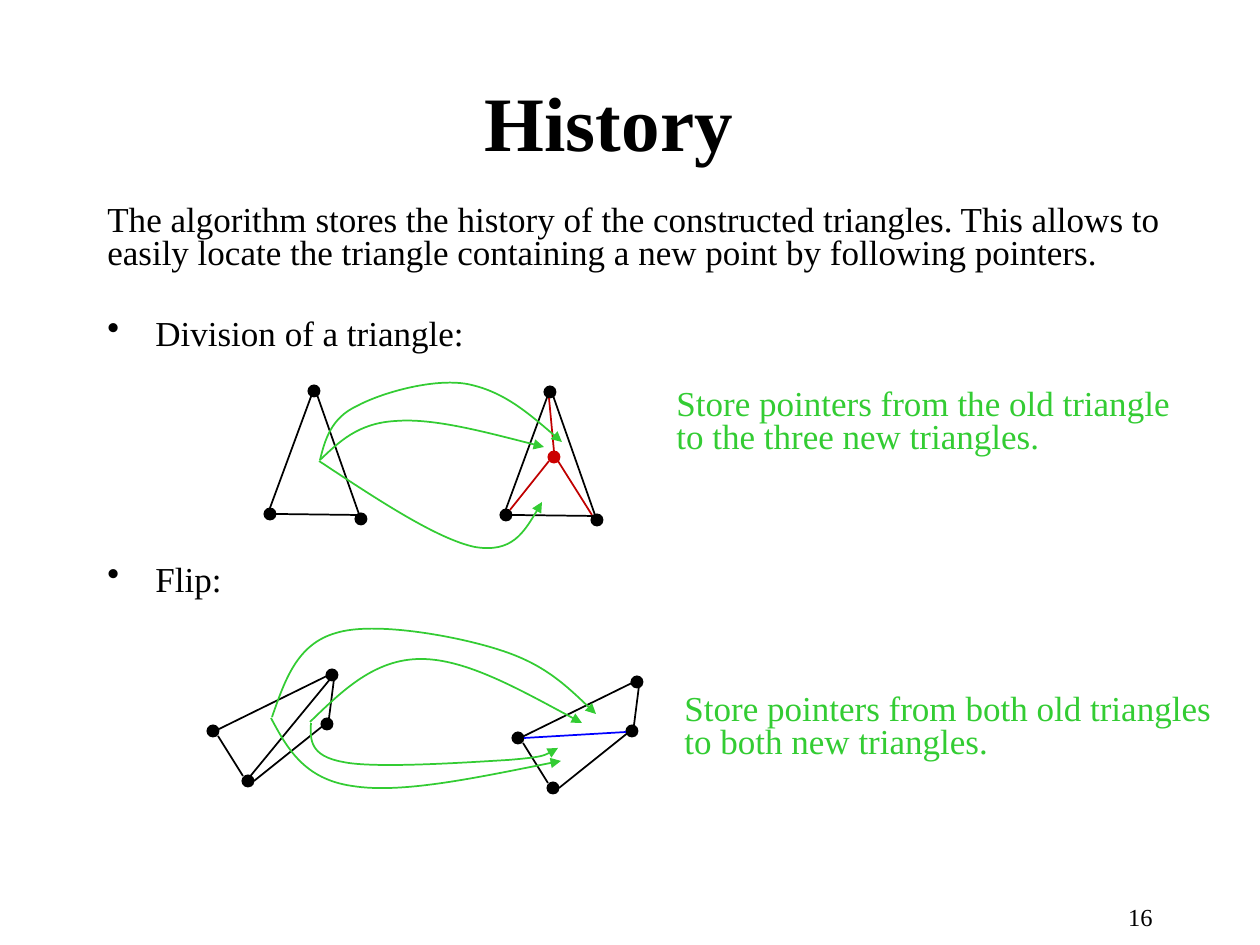
from lxml.etree import SubElement
from pptx import Presentation
from pptx.dml.color import RGBColor
from pptx.enum.shapes import MSO_CONNECTOR as CONNECTOR, MSO_SHAPE as SHAPE
from pptx.enum.text import MSO_ANCHOR as ANCHOR, PP_ALIGN as ALIGN
from pptx.oxml.ns import qn
from pptx.util import Pt

PX = 914400 / 126
FONT = "Times New Roman"
COLOURS = {
    "ink": "000000",
    "new_point": "CC0000",
    "new_edge": "C00000",
    "flipped": "0000FF",
    "pointer": "33CC33",
}
DOT = 13
INDENT = 48

TRIANGLE_DOTS = [(314, 391), (361, 519), (270, 514)]
TRIANGLE_EDGES = [
    ((357, 515), (276, 514)),
    ((270, 508), (312, 394)),
    ((359, 514), (314, 386)),
]
TRIANGLE_OFFSETS = [(0, 0), (236, 1)]
DIVISION_EDGES = [
    ((554, 451), (549, 398)),
    ((510, 510), (549, 461)),
    ((592, 515), (558, 461)),
]
QUAD_DOTS = [(248, 781), (213, 731), (327, 724), (332, 675)]
QUAD_EDGES = [
    ((243, 776), (218, 736)),
    ((215, 731), (331, 674)),
    ((254, 781), (329, 721)),
    ((328, 726), (334, 679)),
]
QUAD_OFFSETS = [(0, 0), (305, 7)]
DIVISION_POINTERS = [
    [(320, 460), (339, 442), (358, 423), (396, 421),
     (433, 418), (489, 433), (544, 447)],
    [(319, 461), (378, 500), (437, 539), (475, 547),
     (512, 553), (527, 528), (542, 502)],
    [(320, 460), (325, 440), (331, 418), (357, 406), (381, 393),
     (433, 378), (467, 384), (503, 391), (532, 416), (562, 442)],
]
FLIP_POINTERS = [
    [(272, 717), (285, 680), (297, 644), (336, 633), (374, 621),
     (457, 636), (500, 650), (544, 664), (570, 689), (596, 714)],
    [(310, 722), (343, 690), (375, 659), (421, 659),
     (466, 659), (524, 692), (582, 723)],
    [(271, 718), (287, 748), (304, 779), (352, 786),
     (401, 794), (480, 777), (561, 761)],
    [(311, 723), (310, 740), (310, 756), (343, 762), (375, 769),
     (473, 762), (508, 760), (544, 757), (551, 753), (558, 748)],
]


def px(value):
    """Turn pixels into EMU."""
    return round(value * PX)


def colour(name):
    """Look up a named colour."""
    return RGBColor.from_string(COLOURS[name])


def place(shape, left, top, width, height):
    """Set the frame of a shape in pixels."""
    shape.left, shape.top = px(left), px(top)
    shape.width, shape.height = px(width), px(height)


def format_paragraph(paragraph, size, name="ink", bold=False):
    """Apply font, size and colour to every run."""
    for run in paragraph.runs:
        run.font.name = FONT
        run.font.size = Pt(size)
        run.font.bold = bold
        run.font.color.rgb = colour(name)


def add_text(slide, frame, text, size, name="ink", wrap=True):
    """Add a text box and return its first paragraph."""
    box = slide.shapes.add_textbox(*map(px, frame))
    box.text_frame.word_wrap = wrap
    paragraph = box.text_frame.paragraphs[0]
    paragraph.text = text
    format_paragraph(paragraph, size, name)
    return paragraph


def add_title(slide, text):
    """Place and format the title placeholder."""
    title = slide.shapes.title
    place(title, 89, 42, 1040, 157)
    title.text_frame.text = text
    title.text_frame.vertical_anchor = ANCHOR.MIDDLE
    paragraph = title.text_frame.paragraphs[0]
    paragraph.alignment = ALIGN.CENTER
    format_paragraph(paragraph, 44, bold=True)


def add_bullet(text_frame, text, gap):
    """Append a bulleted paragraph below a gap in points."""
    paragraph = text_frame.add_paragraph()
    paragraph.text = text
    paragraph.line_spacing = 0.8
    paragraph.space_before = Pt(gap)
    format_paragraph(paragraph, 20)
    properties = paragraph._p.get_or_add_pPr()
    properties.set("marL", str(px(INDENT)))
    properties.set("indent", str(-px(INDENT)))
    SubElement(properties, qn("a:buChar")).set("char", "•")


def add_body(slide):
    """Add the introduction and the two bulleted headings."""
    frame = slide.shapes.add_textbox(px(95), px(199), px(1106), px(410)).text_frame
    frame.word_wrap = True
    intro = frame.paragraphs[0]
    intro.text = (
        "The algorithm stores the history of the constructed triangles. "
        "This allows to easily locate the triangle containing a new point "
        "by following pointers."
    )
    intro.line_spacing = 0.8
    intro.space_before = Pt(4)
    format_paragraph(intro, 20)
    add_bullet(frame, "Division of a triangle:", 27)
    add_bullet(frame, "Flip:", 121)


def add_note(slide, left, top, width, text):
    """Add a green remark beside a figure."""
    paragraph = add_text(slide, (left, top, width, 81), text, 20, "pointer", False)
    paragraph.line_spacing = 0.8
    paragraph.space_before = Pt(4)


def add_dot(slide, centre, name="ink"):
    """Add a vertex around its centre."""
    x, y = centre
    corner = px(x - DOT / 2), px(y - DOT / 2)
    dot = slide.shapes.add_shape(SHAPE.OVAL, *corner, px(DOT), px(DOT))
    dot.shadow.inherit = False
    dot.fill.solid()
    dot.fill.fore_color.rgb = colour(name)
    dot.line.fill.background()


def add_edge(slide, start, end, name="ink"):
    """Add a straight edge between two points."""
    edge = slide.shapes.add_connector(CONNECTOR.STRAIGHT, *map(px, start + end))
    edge.line.color.rgb = colour(name)
    edge.line.width = Pt(1)
    SubElement(edge._element.spPr, qn("a:effectLst"))


def add_figures(slide, dots, edges, offsets):
    """Draw the same vertices and edges at each offset."""
    for dx, dy in offsets:
        for x, y in dots:
            add_dot(slide, (x + dx, y + dy))
        for (x1, y1), (x2, y2) in edges:
            add_edge(slide, (x1 + dx, y1 + dy), (x2 + dx, y2 + dy))


def add_pointer(slide, points):
    """Add a cubic curve with an arrowhead at its end."""
    builder = slide.shapes.build_freeform(*points[0], scale=PX)
    builder.add_line_segments(points[1:], close=False)
    curve = builder.convert_to_shape()
    curve.shadow.inherit = False
    curve.fill.background()
    curve.line.color.rgb = colour("pointer")
    curve.line.width = Pt(1)
    outline = next(curve._element.iter(qn("a:path")))
    segments = outline.findall(qn("a:lnTo"))
    for first in range(0, len(segments), 3):
        bezier = SubElement(outline, qn("a:cubicBezTo"))
        for segment in segments[first:first + 3]:
            bezier.append(segment[0])
            outline.remove(segment)
    SubElement(curve.line._get_or_add_ln(), qn("a:tailEnd")).set("type", "triangle")


def main():
    """Build and save the slide."""
    presentation = Presentation()
    presentation.slide_width, presentation.slide_height = px(1260), px(945)
    slide = presentation.slides.add_slide(presentation.slide_layouts[5])
    add_title(slide, "History")
    add_body(slide)
    add_figures(slide, TRIANGLE_DOTS, TRIANGLE_EDGES, TRIANGLE_OFFSETS)
    add_dot(slide, (554, 457), "new_point")
    for start, end in DIVISION_EDGES:
        add_edge(slide, start, end, "new_edge")
    add_figures(slide, QUAD_DOTS, QUAD_EDGES, QUAD_OFFSETS)
    add_edge(slide, (248, 779), (336, 672))
    add_edge(slide, (524, 738), (626, 732), "flipped")
    for points in DIVISION_POINTERS + FLIP_POINTERS:
        add_pointer(slide, points)
    add_note(slide, 664, 383, 522,
             "Store pointers from the old triangle\nto the three new triangles.")
    add_note(slide, 672, 688, 556,
             "Store pointers from both old triangles\nto both new triangles.")
    add_text(slide, (1072, 896, 93, 28), "16", 14).alignment = ALIGN.RIGHT
    presentation.save("out.pptx")


if __name__ == "__main__":
    main()
